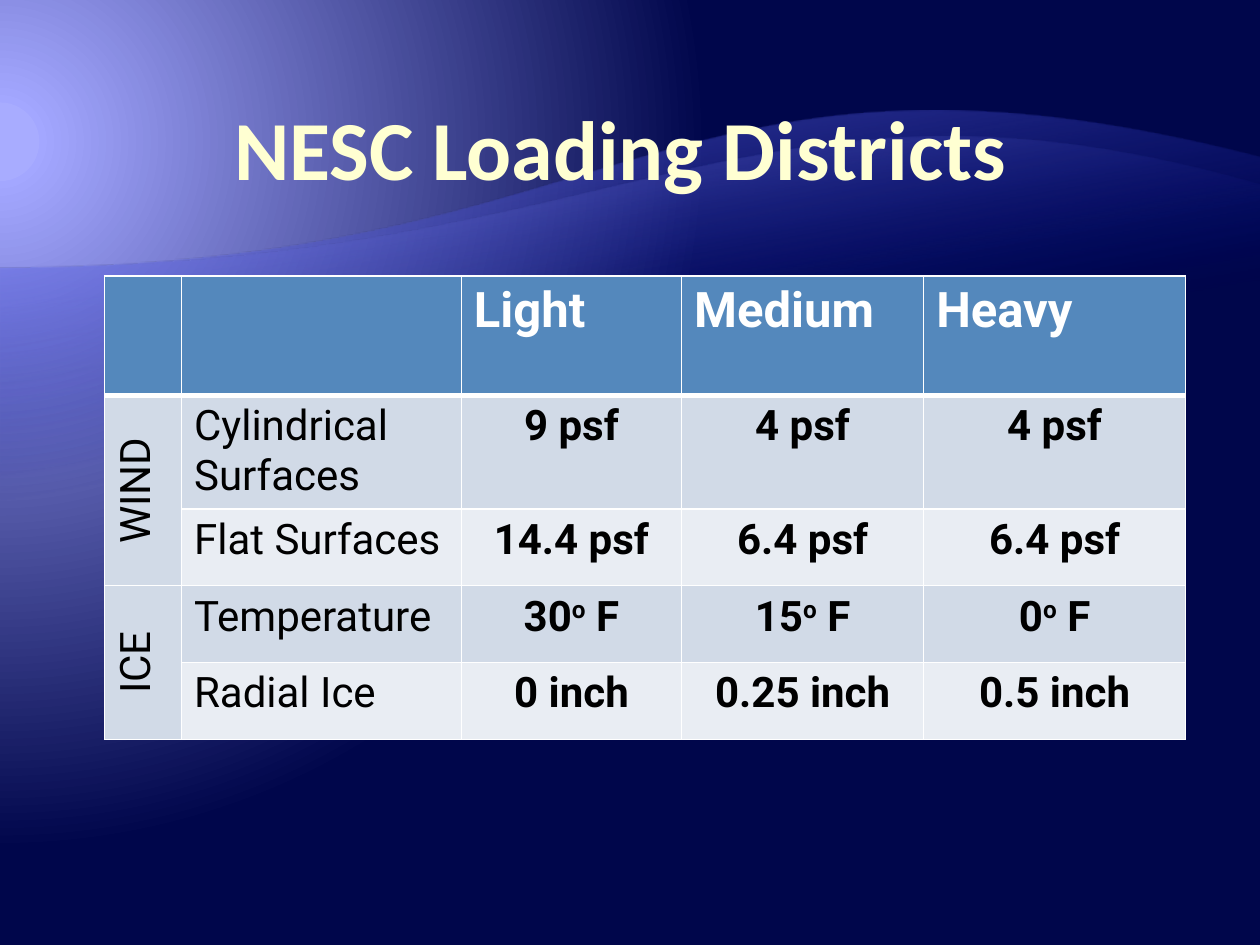
import pptx
import pptx.dml.color
import pptx.enum.text
import pptx.oxml
import pptx.oxml.ns
import pptx.util

Cm = pptx.util.Cm
Pt = pptx.util.Pt
RGB = pptx.dml.color.RGBColor
qn = pptx.oxml.ns.qn
ALIGN = pptx.enum.text.PP_ALIGN
ANCHOR = pptx.enum.text.MSO_ANCHOR

CREAM = RGB(0xFF, 0xFF, 0xD2)
WHITE = RGB(0xFF, 0xFF, 0xFF)
BLACK = RGB(0x00, 0x00, 0x00)
BLUE = RGB(0x54, 0x88, 0xBC)
BAND = RGB(0xD1, 0xDA, 0xE7)
PALE = RGB(0xE9, 0xED, 0xF3)
NAVY = RGB(0x00, 0x06, 0x4B)
ROYAL = RGB(0x00, 0x0D, 0x9E)
LILAC = RGB(0xA3, 0xA7, 0xFF)
GLOW = RGB(0xA8, 0xAC, 0xFF)
VIOLET = RGB(0x79, 0x7F, 0xFF)

TITLE = {"name": "Calibri", "size": Pt(48), "bold": True}
HEAD = {"name": "Roboto", "size": Pt(28), "bold": True}
LABEL = {"name": "Roboto", "size": Pt(24), "bold": False}
VALUE = {"name": "Roboto", "size": Pt(24), "bold": True}

COLS = (1.55, 5.64, 4.44, 4.88, 5.28)
ROWS = (2.41, 1.55, 1.55, 1.55, 1.55)
CELLS = (
    ("", "", "Light", "Medium", "Heavy"),
    ("WIND", "Cylindrical Surfaces", "9 psf", "4 psf", "4 psf"),
    ("", "Flat Surfaces", "14.4 psf", "6.4 psf", "6.4 psf"),
    ("ICE", "Temperature", "30^o^ F", "15^o^ F", "0^o^ F"),
    ("", "Radial Ice", "0 inch", "0.25 inch", "0.5 inch"),
)


def make(xml):
    space = pptx.oxml.ns.nsdecls("a")
    return pptx.oxml.parse_xml(xml.replace(" ", f" {space} ", 1))


def fade(fill, root, stops, shade):
    fill.gradient()
    old = root.find(".//" + qn("a:gradFill"))
    marks = "".join(
        f'<a:gs pos="{pos * 1000}"><a:srgbClr val="{color}">'
        f'<a:alpha val="{alpha * 1000}"/></a:srgbClr></a:gs>'
        for pos, color, alpha in stops)
    new = make(f'<a:gradFill rotWithShape="1"><a:gsLst>{marks}</a:gsLst>'
               f'{shade}</a:gradFill>')
    old.getparent().replace(old, new)


def paint(slide):
    stops = ((5, GLOW, 100), (5, LILAC, 100), (90, NAVY, 100))
    shade = ('<a:path path="circle"><a:fillToRect l="20000" t="30000" '
             'r="135000" b="100000"/></a:path>')
    fade(slide.background.fill, slide.element, stops, shade)


def add_wave(slide, base, crest, bends, color, alpha):
    left, right, start = Cm(0), Cm(25.4), Cm(5.41)
    form = slide.shapes.build_freeform(right, Cm(base), scale=1.0)
    form.add_line_segments(
        [(left, Cm(base)), (left, start), (right, Cm(crest))], close=True)
    wave = form.convert_to_shape()
    wave.shadow.inherit = False
    wave.line.fill.background()
    edge = wave.element.findall(".//" + qn("a:lnTo"))[2]
    points = "".join(f'<a:pt x="{Cm(x)}" y="{Cm(y) - Cm(crest)}"/>'
                     for x, y in bends + ((25.4, crest),))
    curve = make(f'<a:cubicBezTo >{points}</a:cubicBezTo>')
    edge.getparent().replace(edge, curve)
    stops = ((65, ROYAL, 0), (100, color, alpha))
    fade(wave.fill, wave.element, stops,
         f'<a:lin ang="{260 * 60000}" scaled="0"/>')


def style(font, form, color):
    for key, value in form.items():
        setattr(font, key, value)
    font.color.rgb = color


def write(para, text, form, color):
    for turn, part in enumerate(text.split("^")):
        run = para.add_run()
        run.text = part
        style(run.font, form, color)
        if turn % 2:
            run.font._element.set("baseline", "30000")


def add_title(slide, text):
    box = slide.shapes.add_textbox(Cm(1.27), Cm(1.47), Cm(22.86), Cm(2.54))
    frame = box.text_frame
    form = {"word_wrap": True, "vertical_anchor": ANCHOR.BOTTOM,
            "margin_left": 0, "margin_right": 0,
            "margin_top": Cm(0.03), "margin_bottom": Cm(0.03)}
    for key, value in form.items():
        setattr(frame, key, value)
    para = frame.paragraphs[0]
    para.alignment = ALIGN.CENTER
    write(para, text, TITLE, CREAM)


def edge_cell(cell, foot):
    props = cell._tc.get_or_add_tcPr()
    for side in "LRTB":
        width = Pt(foot if side == "B" else 1)
        props.append(make(
            f'<a:ln{side} w="{width}"><a:solidFill><a:srgbClr val="{WHITE}"/>'
            f'</a:solidFill></a:ln{side}>'))


def fill_cell(cell, row, col, text):
    edge_cell(cell, 1 if row else 3)
    cell.fill.solid()
    if row == 0:
        cell.fill.fore_color.rgb = BLUE
    else:
        cell.fill.fore_color.rgb = BAND if row % 2 or col == 0 else PALE
    para = cell.text_frame.paragraphs[0]
    if row and col != 1:
        para.alignment = ALIGN.CENTER
    if row and col == 0:
        cell.vertical_anchor = ANCHOR.MIDDLE
        cell._tc.get_or_add_tcPr().set("vert", "vert270")
    form = HEAD if row == 0 else VALUE if col > 1 else LABEL
    if text:
        write(para, text, form, BLACK if row else WHITE)
    else:
        style(para.font, form, BLACK)


def add_grid(slide):
    frame = slide.shapes.add_table(
        len(ROWS), len(COLS), Cm(2.11), Cm(5.56), Cm(sum(COLS)), Cm(sum(ROWS)))
    table = frame.table
    for col, width in zip(table.columns, COLS):
        col.width = Cm(width)
    for row, height in zip(table.rows, ROWS):
        row.height = Cm(height)
    for row, line in enumerate(CELLS):
        for col, text in enumerate(line):
            fill_cell(table.cell(row, col), row, col, text)
    for top in (1, 3):
        table.cell(top, 0).merge(table.cell(top + 1, 0))


def main():
    deck = pptx.Presentation()
    deck.slide_width, deck.slide_height = Cm(25.4), Cm(19.05)
    slide = deck.slides.add_slide(deck.slide_layouts[6])
    paint(slide)
    add_wave(slide, 18.62, 3.18, ((12.7, 5.41), (13.56, 0.13)), VIOLET, 55)
    add_wave(slide, 16.18, 3.73, ((12.7, 5.41), (15.19, 0.79)), LILAC, 30)
    add_title(slide, "NESC Loading Districts ")
    add_grid(slide)
    deck.save("out.pptx")


if __name__ == "__main__":
    main()
